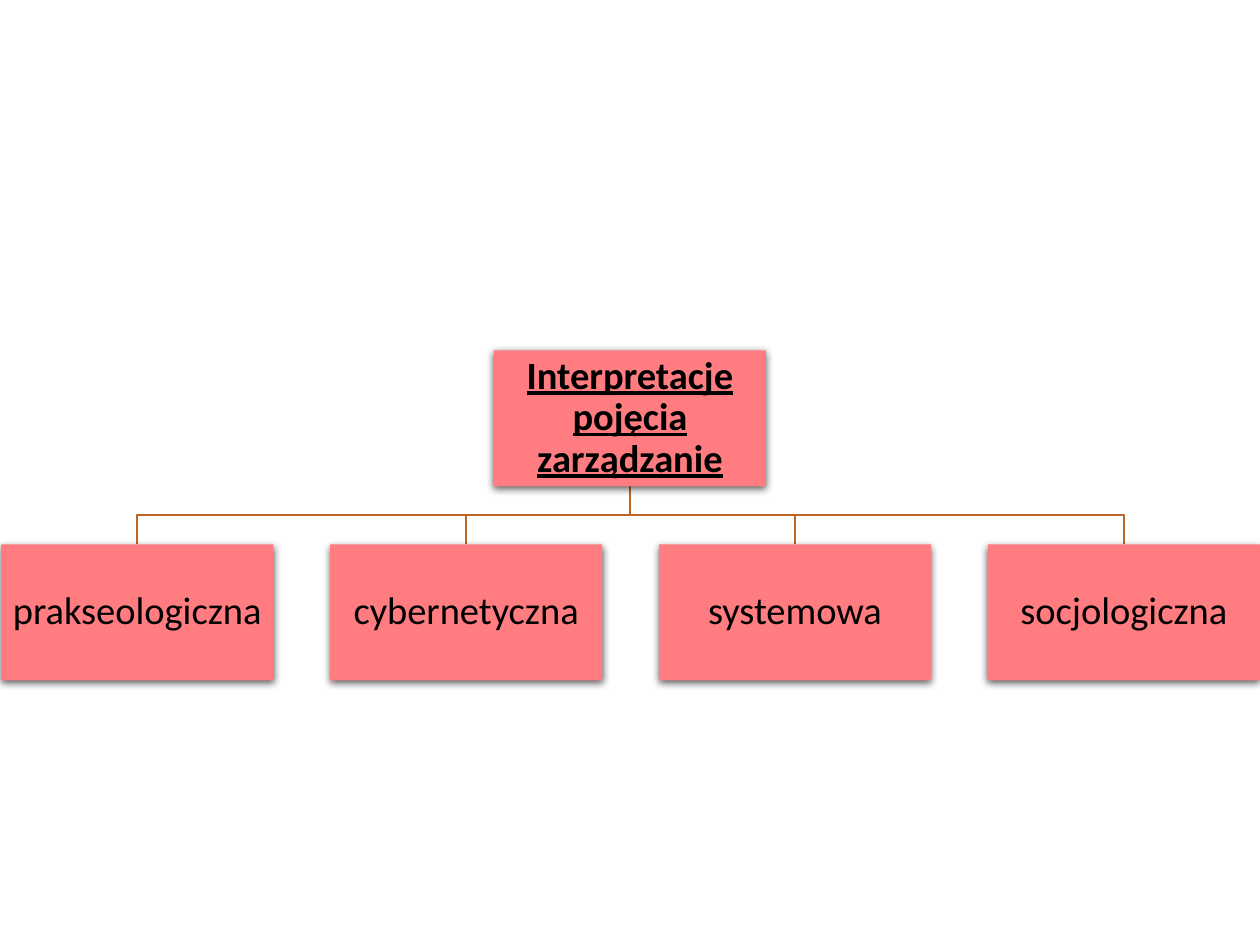
import lxml.etree
import pptx
import pptx.dml.color
import pptx.enum.shapes
import pptx.enum.text
import pptx.oxml.ns
import pptx.util
from pptx.util import Inches

COLORS = {"box": "FF7C80", "branch": "BE6427", "text": "000000", "shadow": "000000"}
TOPIC = "Interpretacje pojęcia zarządzanie"
INTERPRETATIONS = ["prakseologiczna", "cybernetyczna", "systemowa", "socjologiczna"]

BOX_WIDTH, BOX_HEIGHT = 2.16, 1.08
TOPIC_LEFT, TOPIC_TOP = 3.92, 2.78
ROW_LEFT, ROW_TOP, ROW_PITCH = 0.01, 4.32, 2.61


def rgb(name):
    return pptx.dml.color.RGBColor.from_string(COLORS[name])


def add_soft_shadow(box):
    """Give the box a blurred shadow that falls straight down."""
    box.shadow.inherit = False
    qn = pptx.oxml.ns.qn
    effects = box.fill._xPr.find(qn("a:effectLst"))
    shadow = lxml.etree.SubElement(
        effects, qn("a:outerShdw"),
        blurRad=str(pptx.util.Pt(4.5)), dist=str(pptx.util.Pt(1.5)),
        dir="5400000", algn="ctr", rotWithShape="0")
    color = lxml.etree.SubElement(shadow, qn("a:srgbClr"), val=COLORS["shadow"])
    lxml.etree.SubElement(color, qn("a:alpha"), val="63000")


def add_box(slide, left, top, label, heading=False):
    box = slide.shapes.add_shape(
        pptx.enum.shapes.MSO_SHAPE.RECTANGLE,
        Inches(left), Inches(top), Inches(BOX_WIDTH), Inches(BOX_HEIGHT))
    box.fill.solid()
    box.fill.fore_color.rgb = rgb("box")
    box.line.fill.background()
    add_soft_shadow(box)

    frame = box.text_frame
    frame.word_wrap = True
    frame.vertical_anchor = pptx.enum.text.MSO_ANCHOR.MIDDLE
    frame.margin_left = frame.margin_right = Inches(0.02)
    frame.margin_top = frame.margin_bottom = Inches(0.02)

    paragraph = frame.paragraphs[0]
    paragraph.text = label
    paragraph.alignment = pptx.enum.text.PP_ALIGN.CENTER
    paragraph.line_spacing = 0.9
    paragraph.font.name = "Calibri"
    paragraph.font.size = pptx.util.Pt(22)
    paragraph.font.bold = heading
    paragraph.font.underline = heading
    paragraph.font.color.rgb = rgb("text")


def add_branch(slide, child_left):
    """Draw the stepped line from the topic down to one interpretation."""
    start_x, start_y = TOPIC_LEFT + BOX_WIDTH / 2, TOPIC_TOP + BOX_HEIGHT
    end_x = child_left + BOX_WIDTH / 2
    middle_y = (start_y + ROW_TOP) / 2
    outline = slide.shapes.build_freeform(Inches(start_x), Inches(start_y))
    corners = [(start_x, middle_y), (end_x, middle_y), (end_x, ROW_TOP)]
    outline.add_line_segments(
        [(Inches(x), Inches(y)) for x, y in corners], close=False)
    branch = outline.convert_to_shape()
    branch.fill.background()
    branch.line.color.rgb = rgb("branch")
    branch.line.width = pptx.util.Pt(1)
    branch.shadow.inherit = False


def main():
    presentation = pptx.Presentation()
    presentation.slide_width = Inches(10)
    presentation.slide_height = Inches(7.5)
    slide = presentation.slides.add_slide(presentation.slide_layouts[6])

    lefts = [ROW_LEFT + i * ROW_PITCH for i in range(len(INTERPRETATIONS))]
    for left in reversed(lefts):
        add_branch(slide, left)
    add_box(slide, TOPIC_LEFT, TOPIC_TOP, TOPIC, heading=True)
    for left, label in zip(lefts, INTERPRETATIONS):
        add_box(slide, left, ROW_TOP, label)

    presentation.save("out.pptx")


if __name__ == "__main__":
    main()
